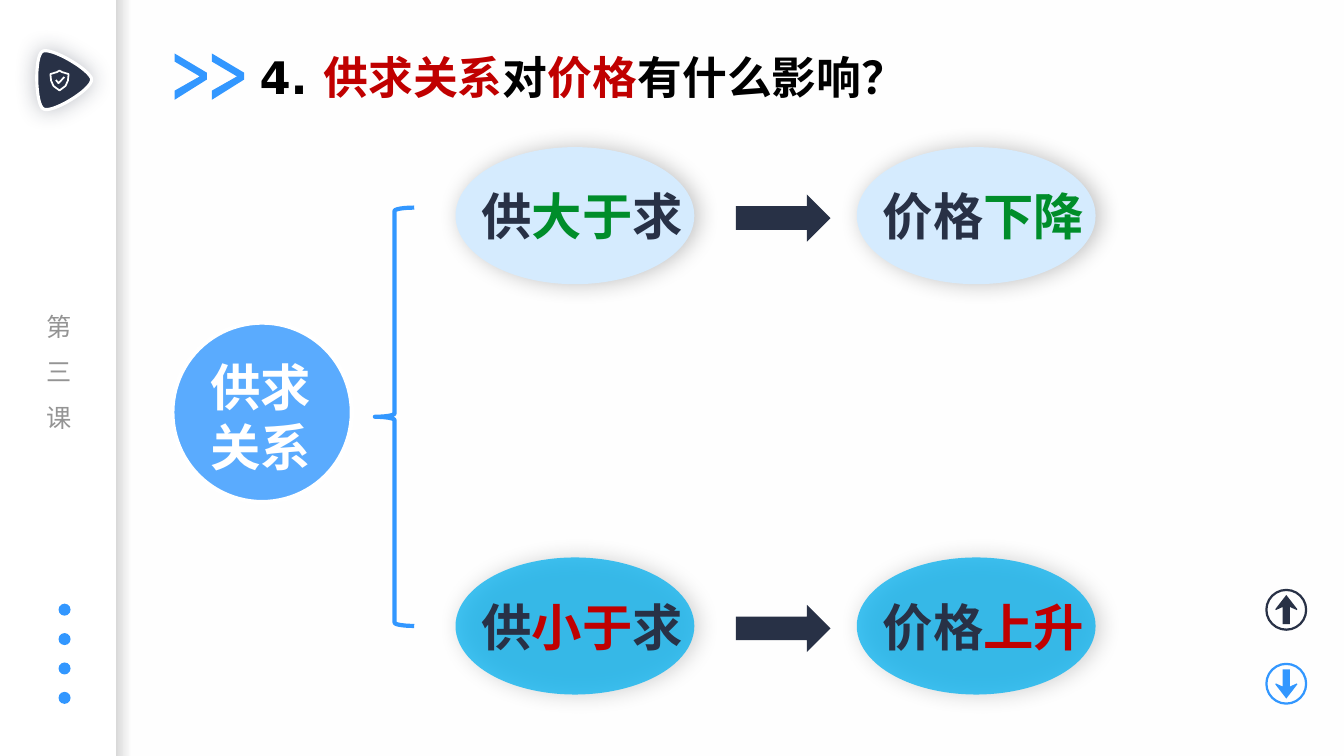
import pptx
import pptx.util
import pptx.dml.color
import pptx.enum.shapes
import pptx.enum.text
import pptx.oxml
import pptx.oxml.ns

Pt = pptx.util.Pt
RGB = pptx.dml.color.RGBColor
SHAPE = pptx.enum.shapes.MSO_SHAPE
ALIGN = pptx.enum.text.PP_ALIGN

BLUE = RGB(0x32, 0x97, 0xFF)
NAVY = RGB(0x28, 0x31, 0x46)
WHITE = RGB(0xFF, 0xFF, 0xFF)
PAPER = RGB(0xFE, 0xFE, 0xFE)
EDGE = RGB(0xD9, 0xD9, 0xD9)
GREY = RGB(0x94, 0x94, 0x94)
BLACK = RGB(0, 0, 0)
RED = RGB(0xC0, 0, 0)
GREEN = RGB(0, 0x8D, 0x2A)
PALE = RGB(0xD5, 0xEB, 0xFE)
SKY = RGB(0, 0xB0, 0xF0)


def bezier(start, *curves, steps=16):
    points = [start]
    for b, c, d in curves:
        a = points[-1]
        for i in range(1, steps + 1):
            t = i / steps
            u = 1 - t
            points.append(tuple(u**3 * a[k] + 3 * u * u * t * b[k] + 3 * u * t * t * c[k] + t**3 * d[k]
                                for k in (0, 1)))
    return points


class Slide:
    title_font = "DejaVu Sans"
    body_font = "Arial"

    def __init__(self, prs):
        self.s = prs.slides.add_slide(prs.slide_layouts[6])
        fill = self.s.background.fill
        fill.solid()
        fill.fore_color.rgb = PAPER

    def style(self, sp, fill=None, line=None, width=0, alpha=None, shadow=None):
        sp.shadow.inherit = False
        if fill is None:
            sp.fill.background()
        else:
            sp.fill.solid()
            sp.fill.fore_color.rgb = fill
        if alpha is not None:
            clr = sp._element.spPr.find(".//" + pptx.oxml.ns.qn("a:srgbClr"))
            clr.append(pptx.oxml.parse_xml(
                f'<a:alpha {pptx.oxml.ns.nsdecls("a")} val="{alpha * 1000}"/>'))
        if line is None:
            sp.line.fill.background()
        else:
            sp.line.color.rgb = line
            sp.line.width = Pt(width)
        if shadow:
            color, opacity, blur, dist = shadow
            sp._element.spPr.find(pptx.oxml.ns.qn("a:effectLst")).append(pptx.oxml.parse_xml(
                f'<a:outerShdw {pptx.oxml.ns.nsdecls("a")} blurRad="{Pt(blur)}" dist="{Pt(dist)}" '
                f'dir="0" algn="ctr" rotWithShape="0"><a:srgbClr val="{color}">'
                f'<a:alpha val="{opacity * 1000}"/></a:srgbClr></a:outerShdw>'))
        return sp

    def shape(self, kind, x, y, w, h, **look):
        return self.style(self.s.shapes.add_shape(kind, Pt(x), Pt(y), Pt(w), Pt(h)), **look)

    def outline(self, points, close=True, **look):
        pts = [(Pt(x), Pt(y)) for x, y in points]
        builder = self.s.shapes.build_freeform(*pts[0], scale=1.0)
        builder.add_line_segments(pts[1:], close=close)
        return self.style(builder.convert_to_shape(), **look)

    def text(self, x, y, w, h, paragraphs, size, font, bold=True, wrap=True,
             align=ALIGN.LEFT, spacing=None, tracking=None):
        tf = self.s.shapes.add_textbox(Pt(x), Pt(y), Pt(w), Pt(h)).text_frame
        tf.word_wrap = wrap
        tf.auto_size = pptx.enum.text.MSO_AUTO_SIZE.SHAPE_TO_FIT_TEXT
        for i, runs in enumerate(paragraphs):
            p = tf.add_paragraph() if i else tf.paragraphs[0]
            p.alignment = align
            if spacing:
                p.line_spacing = spacing
            for words, color in runs:
                r = p.add_run()
                r.text = words
                r.font.size = Pt(size)
                r.font.name = font
                r.font.bold = bold
                r.font.color.rgb = color
                if tracking:
                    r._r.get_or_add_rPr().set("spc", str(tracking * 100))

    def sidebar(self):
        edge = self.shape(SHAPE.RECTANGLE, 82.8, 0, 11.5, 540)
        edge.fill.gradient()
        edge.fill.gradient_angle = 0
        for stop, color in zip(edge.fill.gradient_stops, (EDGE, PAPER)):
            stop.color.rgb = color
        self.shape(SHAPE.RECTANGLE, 0, 0, 82.8, 540, fill=WHITE)
        for i in range(4):
            self.shape(SHAPE.OVAL, 41.8, 431.2 + 21 * i, 8.6, 8.6, fill=BLUE)
        self.text(25.9, 208.1, 55.4, 105.1, [[(c, GREY)] for c in "第三课"], 18,
                  self.title_font, bold=False, spacing=1.5, tracking=1)

    def badge(self):
        triangle = bezier((30.2, 36.7),
                          ((36, 33.1), (65.5, 50.4), (65.5, 56.9)),
                          ((65.5, 64.1), (36.7, 81.4), (31, 77.8)),
                          ((25.2, 74.9), (24.5, 40.3), (30.2, 36.7)))
        self.outline(triangle, fill=NAVY, line=WHITE, width=2.25, shadow=(NAVY, 29, 16, 0))
        half = [(0, 50.4), (1.8, 51.5), (6.5, 52.9), (6, 57.6), (4.3, 61.4), (0, 64.6)]
        shield = [(42.5 + x, y) for x, y in half] + [(42.5 - x, y) for x, y in half[-2:0:-1]]
        self.outline(shield, line=WHITE, width=1.25)
        self.outline([(39.9, 57.2), (41.8, 59.4), (46, 55)], close=False, line=WHITE, width=1.25)

    def nav_button(self, y, color, direction):
        x = 918.8
        self.shape(SHAPE.OVAL, x - 14.2, y - 14.2, 28.4, 28.4, line=color, width=1.6)
        half = [(0, 10.6), (7.9, 0.4), (7.5, -0.2), (2.6, 2), (2.6, -10.2)]
        arrow = half + [(-dx, dy) for dx, dy in half[:0:-1]]
        self.outline([(x + dx, y + direction * dy) for dx, dy in arrow], fill=color)

    def chevron(self, x, y):
        points = [(0, 0), (23, 13.7), (23, 18.7), (0, 33.1), (0, 26.6), (18, 16.4), (0, 5.8)]
        self.outline([(x + dx, y + dy) for dx, dy in points], fill=BLUE)

    def bubble(self, x, y, runs, fill, alpha):
        self.shape(SHAPE.OVAL, x, y, 170.6, 97.9, fill=fill, alpha=alpha,
                   shadow=(BLACK, 23, 16, 3))
        self.text(x + 11.5, y + 23.8, 159.2, 51.1, [runs], 36, self.body_font)


def main():
    prs = pptx.Presentation()
    prs.slide_width, prs.slide_height = Pt(960), Pt(540)
    s = Slide(prs)
    s.sidebar()
    s.badge()
    s.nav_button(488.4, BLUE, 1)
    s.nav_button(435.6, NAVY, -1)

    title = [("4. ", BLACK), ("供求关系", RED), ("对", BLACK), ("价格", RED), ("有什么影响？", BLACK)]
    s.text(176.4, 31.7, 480.2, 46.1, [title], 32, s.title_font, wrap=False, align=ALIGN.CENTER)
    for x in (124.7, 151.3):
        s.chevron(x, 38.2)

    s.shape(SHAPE.LEFT_BRACE, 267.8, 148.3, 28.1, 298.8, line=BLUE, width=3)
    s.shape(SHAPE.OVAL, 123.1, 230.4, 128.2, 128.2, fill=BLUE, alpha=80, line=WHITE, width=3)
    s.text(143.3, 250.6, 88.6, 94.3, [[("供求关系", WHITE)]], 36, s.body_font)

    rows = [
        (105.1, "大于", "下降", GREEN, PALE, None),
        (398.2, "小于", "上升", RED, SKY, 74),
    ]
    for y, relation, change, accent, fill, alpha in rows:
        s.bubble(325.4, y, [("供", NAVY), (relation, accent), ("求", NAVY)], fill, alpha)
        s.bubble(612, y, [("价格", NAVY), (change, accent)], fill, alpha)
        s.shape(SHAPE.RIGHT_ARROW, 525.6, y + 33.8, 67.7, 33.8, fill=NAVY)
    prs.save("out.pptx")


if __name__ == "__main__":
    main()
